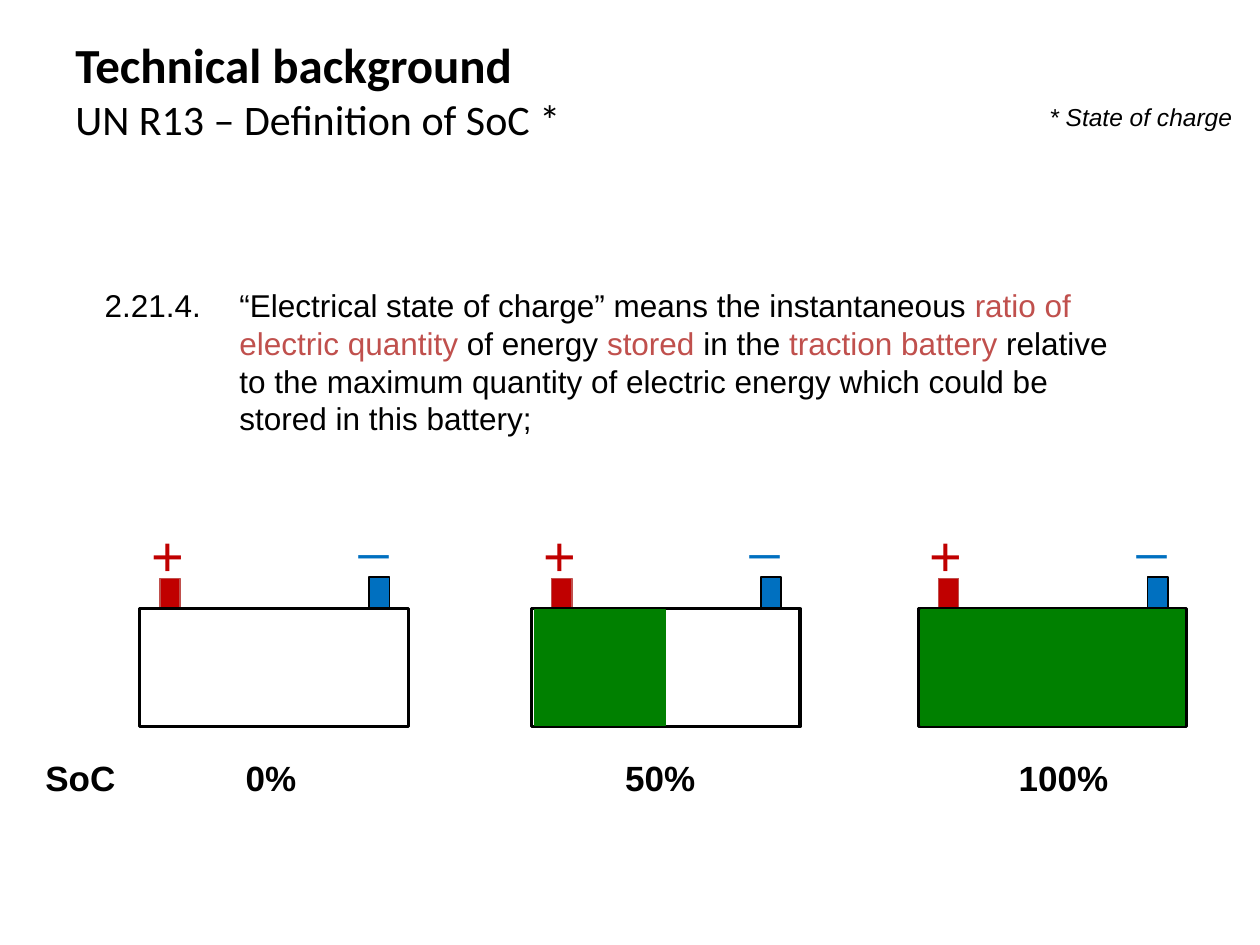
import pptx
import pptx.dml.color
import pptx.enum.shapes
import pptx.enum.text
import pptx.util

Inches = pptx.util.Inches
ALIGN = pptx.enum.text.PP_ALIGN
ANCHOR = pptx.enum.text.MSO_ANCHOR
BLACK, WHITE, RED, BLUE = "000000", "FFFFFF", "C00000", "0070C0"
GREEN, ACCENT = "008000", "C0504D"


def color(hex_text):
    return pptx.dml.color.RGBColor.from_string(hex_text)


def style_span(span, size, fill=BLACK, **font_values):
    values = {"name": "Arial", "size": pptx.util.Pt(size), **font_values}
    for name, value in values.items():
        setattr(span.font, name, value)
    span.font.color.rgb = color(fill)


def add_text(parent, box, spans, inset=0, before=4, align=ALIGN.LEFT, **frame_values):
    """Add one paragraph made of (text, format) spans and return it."""
    frame = parent.add_textbox(*map(Inches, box)).text_frame
    values = {
        "word_wrap": True,
        "margin_left": Inches(inset),
        "margin_right": Inches(inset),
        "margin_top": Inches(inset / 2),
        "margin_bottom": Inches(inset / 2),
        **frame_values,
    }
    for name, value in values.items():
        setattr(frame, name, value)
    para = frame.paragraphs[0]
    para.alignment = align
    para.space_before = pptx.util.Pt(before)
    for index, (text, span_format) in enumerate(spans):
        if index and text.startswith("\n"):
            para.add_line_break()
        span = para.add_run()
        span.text = text.lstrip("\n")
        style_span(span, **span_format)
    return para


def add_block(parent, box, fill, line, width=0.75):
    block = parent.add_shape(
        pptx.enum.shapes.MSO_SHAPE.RECTANGLE, *map(Inches, box))
    block.shadow.inherit = False
    block.fill.solid()
    block.fill.fore_color.rgb = color(fill)
    block.line.color.rgb = color(line)
    block.line.width = pptx.util.Pt(width)


def add_heading(page, box):
    spans = [
        ("Technical background", {"size": 28, "name": "Calibri", "bold": True}),
        ("\nUN R13 – Definition of SoC *", {"size": 24, "name": "Calibri"}),
    ]
    add_text(page.shapes, box, spans, inset=0.1, before=0,
             vertical_anchor=ANCHOR.MIDDLE)


def add_definition(page, box):
    parts = [
        ("2.21.4.\t“Electrical state of charge” means the instantaneous ", BLACK),
        ("ratio of electric quantity ", ACCENT),
        ("of energy ", BLACK),
        ("stored", ACCENT),
        (" in the ", BLACK),
        ("traction battery ", ACCENT),
        ("relative to the maximum quantity of electric energy which could be "
         "stored in this battery;", BLACK),
    ]
    spans = [(text, {"size": 18, "fill": fill}) for text, fill in parts]
    para = add_text(page.shapes, box, spans)
    properties = para._p.get_or_add_pPr()
    properties.set("marL", str(Inches(1.07)))
    properties.set("indent", str(Inches(-1.07)))


def add_soc_label(parent, box, text, align=ALIGN.LEFT):
    add_text(parent, box, [(text, {"size": 20, "bold": True})], align=align)


def add_battery(page, box, charge, label_left):
    """Draw a battery case with its poles, charge level and percentage."""
    left, top, width, height = box
    group = page.shapes.add_group_shape().shapes
    add_block(group, (left + 0.16, top - 0.24, 0.16, 0.24), RED, ACCENT)
    add_block(group, box, WHITE, BLACK, 1.75)
    add_block(group, (left + 1.82, top - 0.25, 0.16, 0.24), BLUE, BLACK)
    signs = [("+", 0.09, -0.55, 32, RED), ("_", 1.74, -0.76, 30, BLUE)]
    for sign, across, down, size, fill in signs:
        add_text(group, (left + across, top + down, 0.31, 0.24),
                 [(sign, {"size": size, "fill": fill})],
                 vertical_anchor=ANCHOR.MIDDLE)
    if charge:
        level = (left + 0.02, top + 0.01, (width - 0.04) * charge, height - 0.02)
        add_block(group, level, GREEN, GREEN)
    add_soc_label(group, (label_left, 6, 1.18, 0.31), f"{charge:.0%}", ALIGN.CENTER)


def main():
    deck = pptx.Presentation()
    deck.slide_width, deck.slide_height = Inches(10), Inches(7.5)
    page = deck.slides.add_slide(deck.slide_layouts[6])

    add_definition(page, (0.83, 2.27, 8.2, 1.48))
    batteries = [(1.11, 0, 1.56), (4.22, 0.5, 4.65), (7.29, 1, 7.85)]
    for left, charge, label_left in batteries:
        add_battery(page, (left, 4.83, 2.13, 0.94), charge, label_left)
    add_soc_label(page.shapes, (0.36, 6, 0.81, 0.31), "SoC")
    add_heading(page, (0.5, 0.08, 9, 1.25))
    add_text(page.shapes, (8.23, 0.76, 1.65, 0.34),
             [("* State of charge", {"size": 14, "italic": True})],
             inset=0.1, word_wrap=False)

    deck.save("out.pptx")


if __name__ == "__main__":
    main()
